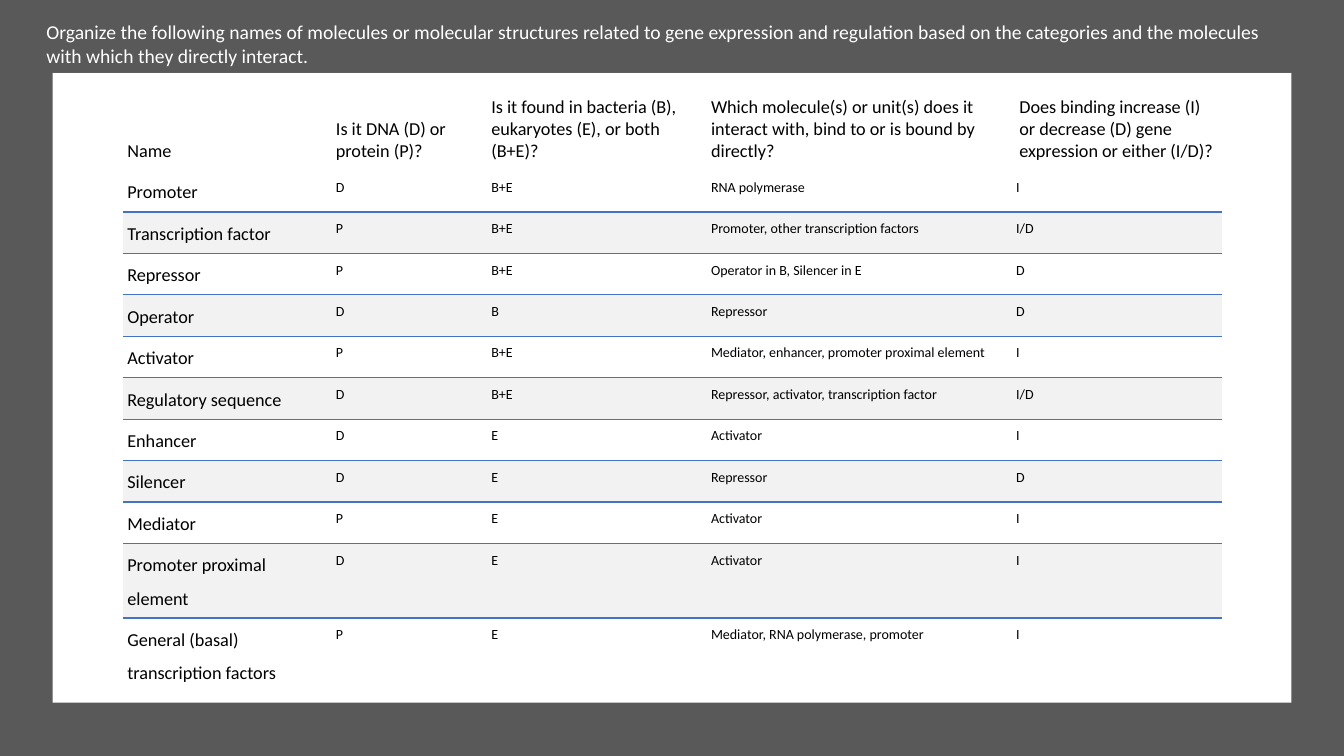
from dataclasses import dataclass

from lxml.etree import SubElement
from pptx import Presentation
from pptx.dml.color import RGBColor
from pptx.enum.shapes import MSO_SHAPE
from pptx.enum.text import MSO_ANCHOR, PP_ALIGN
from pptx.oxml.ns import qn
from pptx.util import Pt


@dataclass(frozen=True)
class Theme:
    font: str = "Calibri"
    backdrop: str = "595959"
    panel: str = "FFFFFF"
    band: str = "F2F2F2"
    rule: str = "4472C4"
    ink: str = "000000"
    title_ink: str = "FFFFFF"
    title_size: float = 14
    name_size: float = 13
    answer_size: float = 10
    rule_width: float = 1


THEME = Theme()
SLIDE_WIDTH, SLIDE_HEIGHT = 960, 540
PLAIN_TABLE_STYLE = "{2D5ABB26-0587-4C30-8999-92F81FD0307C}"
COLUMN_WIDTHS = [149, 111, 157, 218, 150]
HEADER_HEIGHT, LINE_HEIGHT, TWO_LINE_HEIGHT = 71.3, 29.6, 53.2
INTERACTION_COLUMN = 3

INSTRUCTION = (
    "Organize the following names of molecules or molecular structures related to "
    "gene expression and regulation based on the categories and the molecules with "
    "which they directly interact."
)
QUESTIONS = [
    "Name",
    "Is it DNA (D) or protein (P)?",
    "Is it found in bacteria (B), eukaryotes (E), or both (B+E)?",
    "Which molecule(s) or unit(s) does it interact with, bind to or is bound by directly?",
    "Does binding increase (I) or decrease (D) gene expression or either (I/D)?",
]
MOLECULES = [
    ("Promoter", "D", "B+E", "RNA polymerase", "I"),
    ("Transcription factor", "P", "B+E", "Promoter, other transcription factors", "I/D"),
    ("Repressor", "P", "B+E", "Operator in B, Silencer in E", "D"),
    ("Operator", "D", "B", "Repressor", "D"),
    ("Activator", "P", "B+E", "Mediator, enhancer, promoter proximal element", "I"),
    ("Regulatory sequence", "D", "B+E", "Repressor, activator, transcription factor", "I/D"),
    ("Enhancer", "D", "E", "Activator", "I"),
    ("Silencer", "D", "E", "Repressor", "D"),
    ("Mediator", "P", "E", "Activator", "I"),
    ("Promoter proximal element", "D", "E", "Activator", "I"),
    ("General (basal) transcription factors", "P", "E", "Mediator, RNA polymerase, promoter", "I"),
]


def paint(target, color):
    target.fill.solid()
    target.fill.fore_color.rgb = RGBColor.from_string(color)


def style_text(paragraph, size, color):
    paragraph.font.name = THEME.font
    paragraph.font.size = Pt(size)
    paragraph.font.color.rgb = RGBColor.from_string(color)


def add_block(slide, left, top, width, height, color):
    block = slide.shapes.add_shape(
        MSO_SHAPE.RECTANGLE, Pt(left), Pt(top), Pt(width), Pt(height))
    block.shadow.inherit = False
    block.line.fill.background()
    paint(block, color)


def add_instruction(slide):
    instruction = slide.shapes.add_textbox(Pt(26), Pt(11), Pt(907), Pt(41))
    paint(instruction, THEME.backdrop)
    instruction.text_frame.word_wrap = True
    paragraph = instruction.text_frame.paragraphs[0]
    paragraph.text = INSTRUCTION
    style_text(paragraph, THEME.title_size, THEME.title_ink)


def add_rule(cell, side):
    border = SubElement(
        cell._tc.get_or_add_tcPr(), qn(f"a:{side}"), w=str(Pt(THEME.rule_width)))
    fill = SubElement(border, qn("a:solidFill"))
    SubElement(fill, qn("a:srgbClr"), val=THEME.rule)


def write_cell(cell, text, size):
    cell.margin_left = cell.margin_right = Pt(3)
    cell.margin_top, cell.margin_bottom = Pt(0), Pt(5.8)
    paragraph = cell.text_frame.paragraphs[0]
    paragraph.text = text
    style_text(paragraph, size, THEME.ink)
    return paragraph


def fill_header(table):
    for column, question in enumerate(QUESTIONS):
        cell = table.cell(0, column)
        paragraph = write_cell(cell, question, THEME.name_size)
        cell.vertical_anchor = MSO_ANCHOR.BOTTOM
        cell.fill.background()
    paragraph._p.get_or_add_pPr().set("marL", str(Pt(2.2)))


def fill_molecule(table, row, molecule):
    shaded = row % 2 == 0
    for column, answer in enumerate(molecule):
        cell = table.cell(row, column)
        size = THEME.answer_size if column else THEME.name_size
        paragraph = write_cell(cell, answer, size)
        paragraph.line_spacing = 1.5
        if column not in (0, INTERACTION_COLUMN):
            paragraph.alignment = PP_ALIGN.JUSTIFY
        if shaded:
            add_rule(cell, "lnT")
            paint(cell, THEME.band)
        else:
            if row < len(MOLECULES):
                add_rule(cell, "lnB")
            cell.fill.background()


def add_molecule_table(slide):
    heights = [HEADER_HEIGHT] + [LINE_HEIGHT] * 9 + [TWO_LINE_HEIGHT] * 2
    frame = slide.shapes.add_table(
        len(heights), len(COLUMN_WIDTHS), Pt(88), Pt(50.5),
        Pt(sum(COLUMN_WIDTHS)), Pt(sum(heights)))
    table = frame.table
    table.first_row = table.horz_banding = False
    table._tbl.tblPr.find(qn("a:tableStyleId")).text = PLAIN_TABLE_STYLE
    for column, width in zip(table.columns, COLUMN_WIDTHS):
        column.width = Pt(width)
    for row, height in zip(table.rows, heights):
        row.height = Pt(height)
    fill_header(table)
    for row, molecule in enumerate(MOLECULES, start=1):
        fill_molecule(table, row, molecule)


def main():
    presentation = Presentation()
    presentation.slide_width = Pt(SLIDE_WIDTH)
    presentation.slide_height = Pt(SLIDE_HEIGHT)
    slide = presentation.slides.add_slide(presentation.slide_layouts[6])
    add_block(slide, 0, 0, SLIDE_WIDTH, SLIDE_HEIGHT, THEME.backdrop)
    add_block(slide, 37.5, 52, 885, 450, THEME.panel)
    add_molecule_table(slide)
    add_instruction(slide)
    presentation.save("out.pptx")


if __name__ == "__main__":
    main()
